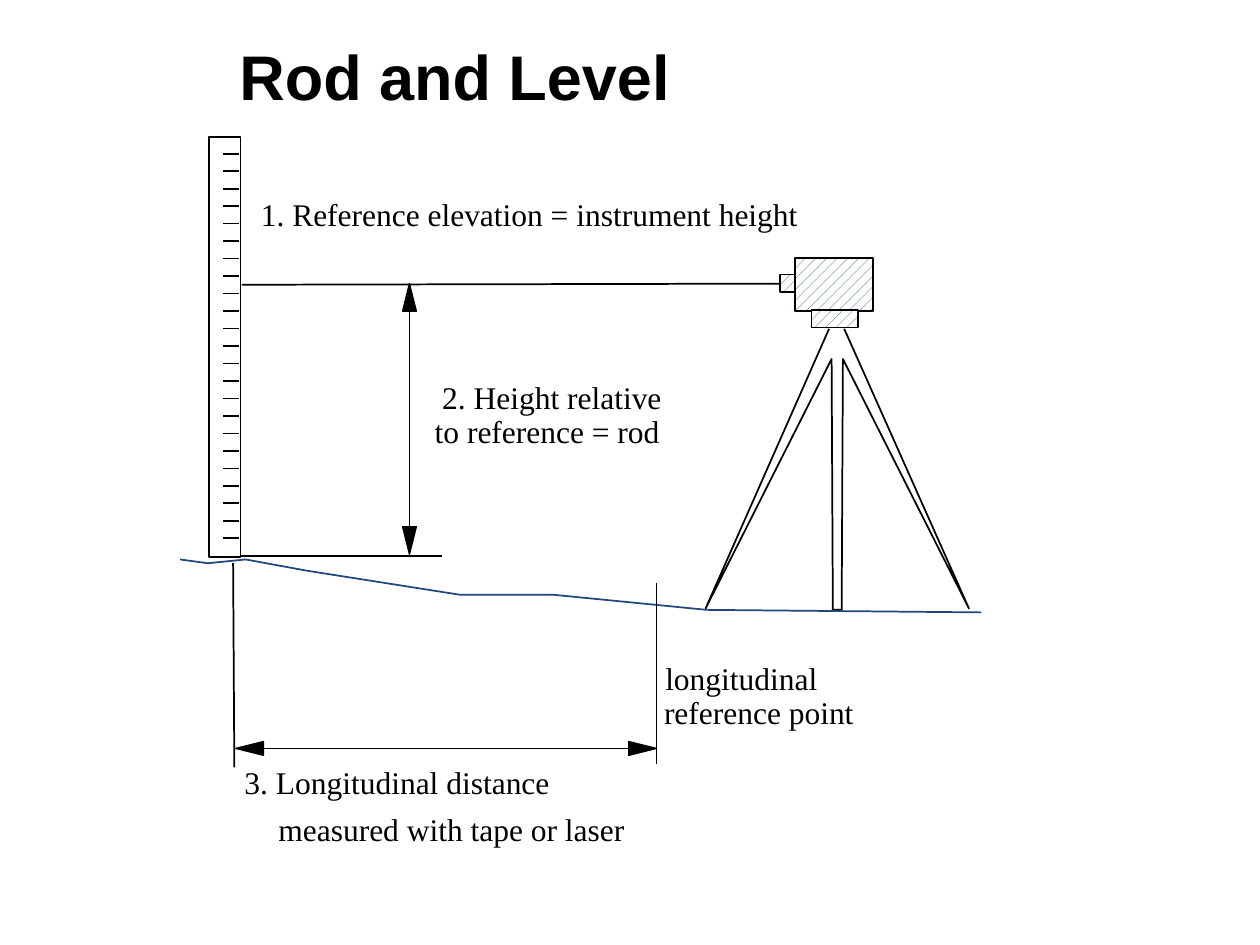
from dataclasses import dataclass

from lxml import etree
from pptx import Presentation
from pptx.dml.color import RGBColor
from pptx.enum.dml import MSO_PATTERN
from pptx.enum.shapes import MSO_CONNECTOR, MSO_SHAPE
from pptx.enum.text import MSO_ANCHOR, MSO_AUTO_SIZE
from pptx.oxml.ns import qn
from pptx.util import Inches, Pt


@dataclass(frozen=True)
class Theme:
    ink = RGBColor(0, 0, 0)
    paper = RGBColor(255, 255, 255)
    blue = RGBColor(0x1F, 0x49, 0x7D)
    title_font = "Arial"
    label_font = "Times New Roman"
    title_size = Pt(36)
    label_size = Pt(18)
    line = Pt(1)
    thin = Pt(0.75)


T = Theme()


def add_line(sp, x1, y1, x2, y2):
    c = sp.add_connector(MSO_CONNECTOR.STRAIGHT,
                         Inches(x1), Inches(y1), Inches(x2), Inches(y2))
    c.line.color.rgb = T.ink
    c.line.width = T.line
    etree.SubElement(c._element.spPr, qn("a:effectLst"))


def add_rect(sp, x, y, w, h, hatched=False):
    r = sp.add_shape(MSO_SHAPE.RECTANGLE, Inches(x), Inches(y), Inches(w), Inches(h))
    r.shadow.inherit = False
    if hatched:
        r.fill.patterned()
        r.fill.pattern = MSO_PATTERN.PERCENT_20
        r.fill.fore_color.rgb = T.blue
        r.fill.back_color.rgb = T.paper
    else:
        r.fill.solid()
        r.fill.fore_color.rgb = T.paper
    r.line.color.rgb = T.ink
    r.line.width = T.line


def add_outline(sp, x, y, points, color, width=T.line, filled=False):
    """Draw a path through points given relative to (x, y)."""
    pts = [(Inches(x + dx), Inches(y + dy)) for dx, dy in points]
    fb = sp.build_freeform(*pts[0])
    fb.add_line_segments(pts[1:], close=filled)
    f = fb.convert_to_shape()
    f.shadow.inherit = False
    if filled:
        f.fill.solid()
        f.fill.fore_color.rgb = color
    else:
        f.fill.background()
    f.line.color.rgb = color
    f.line.width = width


def add_text(sp, x, y, w, h, text, font, size, bold=False, inset=0):
    tb = sp.add_textbox(Inches(x), Inches(y), Inches(w), Inches(h))
    tf = tb.text_frame
    tf.margin_left = Inches(inset)
    tf.margin_right = tf.margin_top = tf.margin_bottom = 0
    tf.vertical_anchor = MSO_ANCHOR.TOP
    r = tf.paragraphs[0].add_run()
    r.text = text
    r.font.name, r.font.size, r.font.bold = font, size, bold
    r.font.color.rgb = T.ink
    return tf


def title(sp, x, y, w, h, text):
    tf = add_text(sp, x, y, w, h, text, T.title_font, T.title_size, True, inset=0.5)
    tf.word_wrap = True


def label(sp, x, y, w, text):
    tf = add_text(sp, x, y, w, 0.3, text, T.label_font, T.label_size)
    tf.word_wrap = False
    tf.auto_size = MSO_AUTO_SIZE.SHAPE_TO_FIT_TEXT


def rod(sp, x, y, w, h, ticks=23):
    g = sp.add_group_shape().shapes
    add_rect(g, x, y, w, h)
    pitch = h / (ticks + 1)
    for i in range(ticks):
        ty = y + 0.13 + i * pitch
        add_line(g, x + 0.11, ty, x + w - 0.01, ty)


def level(sp, x, y):
    """Tripod first, then the telescope, eyepiece and base on top of it."""
    legs = [(0.98, 0), (0, 2.22), (1, 0.24), (1.01, 2.23),
            (1.08, 2.23), (1.09, 0.24), (2.09, 2.22), (1.1, 0)]
    add_outline(sp, x, y + 0.56, legs, T.ink)
    for dx, dy, w, h in [(0.71, 0, 0.62, 0.42), (0.59, 0.13, 0.12, 0.14),
                         (0.84, 0.41, 0.37, 0.14)]:
        add_rect(sp, x + dx, y + dy, w, h, hatched=True)


def dimension(sp, x, y, length, vertical=False, head=0.22, half=0.055):
    """Double-headed arrow running right or down from (x, y)."""
    g = sp.add_group_shape().shapes

    def turn(along, across):
        return (across, along) if vertical else (along, across)

    for tip, base in [(0, head), (length, length - head)]:
        triangle = [turn(tip, 0), turn(base, -half), turn(base, half)]
        add_outline(g, x, y, triangle, T.ink, T.thin, filled=True)
    (x1, y1), (x2, y2) = turn(head, 0), turn(length - head, 0)
    add_line(g, x + x1, y + y1, x + x2, y + y2)


def ground(sp, x, y):
    profile = [(0, 0), (0.22, 0.03), (0.52, 0), (1.01, 0.09), (2.22, 0.28),
               (2.96, 0.28), (4.18, 0.4), (6.36, 0.42)]
    add_outline(sp, x, y, profile, T.blue)


def main():
    prs = Presentation()
    prs.slide_width, prs.slide_height = Inches(10), Inches(7.5)
    s = prs.slides.add_slide(prs.slide_layouts[6])
    sp = s.shapes

    title(sp, 1.4, 0.3, 7.56, 1.24, "Rod and Level")

    # Line of sight, instrument and terrain
    add_line(sp, 6.81, 2.25, 1.92, 2.26)
    level(sp, 5.6, 2.05)
    ground(sp, 1.43, 4.44)

    # Height at the rod
    add_line(sp, 1.84, 4.41, 3.51, 4.41)
    dimension(sp, 3.25, 2.25, 2.15, vertical=True)

    # Longitudinal distance
    add_line(sp, 1.85, 4.47, 1.86, 6.09)
    add_line(sp, 5.21, 4.63, 5.21, 6.06)
    dimension(sp, 1.87, 5.94, 3.34)

    rod(sp, 1.66, 1.09, 0.25, 3.33)

    # Labels
    for x, y, w, text in [
        (2.07, 1.55, 4.31, "1. Reference elevation = instrument height"),
        (3.51, 3.0, 1.82, "2. Height relative"),
        (3.45, 3.27, 1.81, "to reference = rod"),
        (1.94, 6.06, 2.51, "3. Longitudinal distance"),
        (2.21, 6.43, 2.78, "measured with tape or laser"),
        (5.28, 5.23, 1.28, "longitudinal"),
        (5.27, 5.5, 1.52, "reference point"),
    ]:
        label(sp, x, y, w, text)

    prs.save("out.pptx")


if __name__ == "__main__":
    main()
